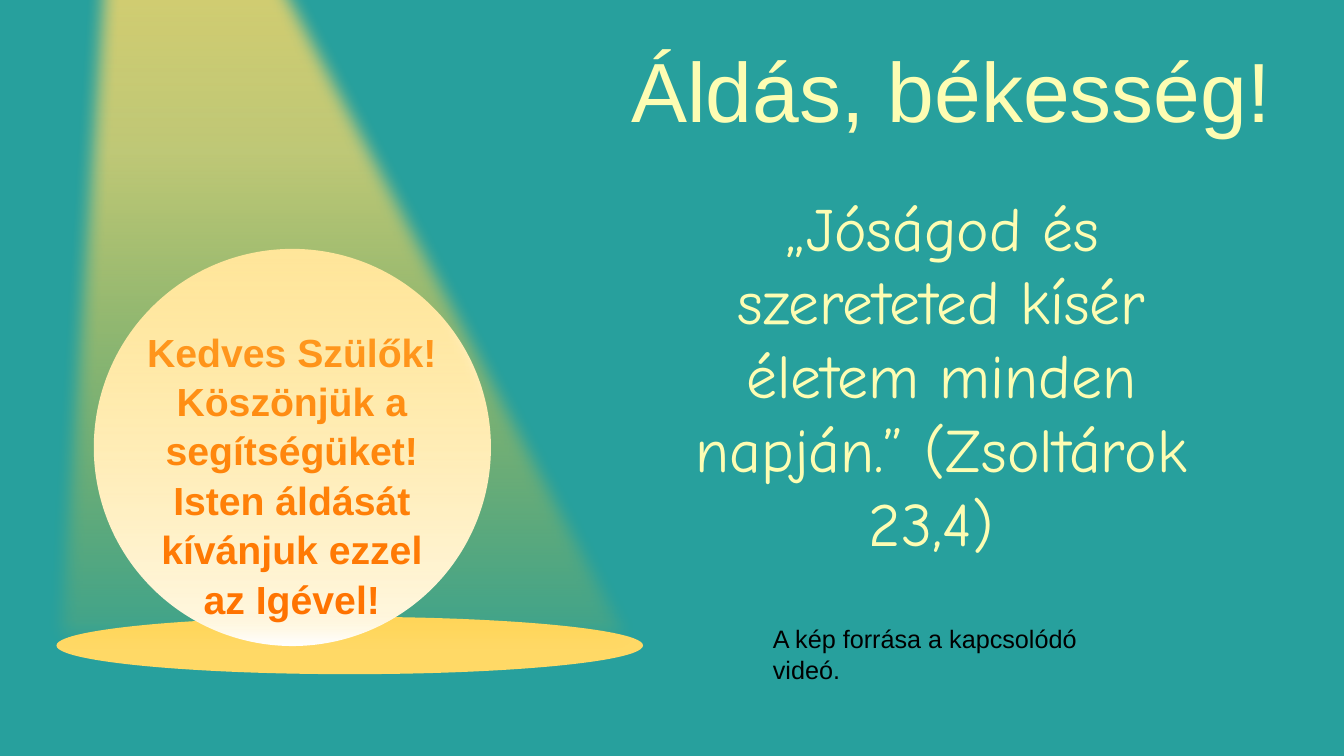
from pptx import Presentation
from pptx.dml.color import RGBColor as RGB
from pptx.enum.shapes import MSO_SHAPE as SHAPE
from pptx.enum.text import MSO_ANCHOR as ANCHOR, MSO_AUTO_SIZE as AUTO, PP_ALIGN as ALIGN
from pptx.oxml.ns import qn
from pptx.util import Pt
from lxml.etree import SubElement

COLOURS = {
    "teal": "27A09D",
    "cream": "FDFDB3",
    "orange": "FF6600",
    "gold": "FFD966",
    "amber": "FFC000",
    "white": "FFFFFF",
    "black": "000000",
}


class BlessingSlide:
    def __init__(self, prs):
        self.slide = prs.slides.add_slide(prs.slide_layouts[5])
        background = self.slide.background.fill
        background.solid()
        background.fore_color.rgb = self.colour("teal")

    @staticmethod
    def colour(name):
        return RGB.from_string(COLOURS[name])

    def shape(self, kind, box, fill=None):
        item = self.slide.shapes.add_shape(kind, *map(Pt, box))
        item.shadow.inherit = False
        item.line.fill.background()
        if fill:
            item.fill.solid()
            item.fill.fore_color.rgb = self.colour(fill)
        return item

    def beam(self, box, apex, stops, soft_radius):
        """Draw a soft-edged triangle; stops are (position %, colour, opacity %) from the bottom up."""
        light = self.shape(SHAPE.ISOSCELES_TRIANGLE, box)
        light.adjustments[0] = apex
        light.fill.gradient()
        light.fill.gradient_angle = 90
        properties = light._element.spPr
        stop_list = properties.find(".//" + qn("a:gsLst"))
        for old_stop in list(stop_list):
            stop_list.remove(old_stop)
        for position, name, opacity in stops:
            stop = SubElement(stop_list, qn("a:gs"), pos=str(position * 1000))
            tint = SubElement(stop, qn("a:srgbClr"), val=COLOURS[name])
            SubElement(tint, qn("a:alpha"), val=str(opacity * 1000))
        effects = properties.find(qn("a:effectLst"))
        SubElement(effects, qn("a:softEdge"), rad=str(Pt(soft_radius)))

    def text(self, box, lines, **style):
        holder = self.slide.shapes.add_textbox(*map(Pt, box))
        self.fill_text(holder, lines, **style)

    def title(self, box, wording, **style):
        holder = self.slide.shapes.title
        for side, length in zip(("left", "top", "width", "height"), box):
            setattr(holder, side, Pt(length))
        self.fill_text(holder, [wording], **style)

    def fill_text(self, holder, lines, size, colour, font="Arial", bold=False,
                  wrap=True, **paragraph_format):
        frame = holder.text_frame
        frame_format = {"word_wrap": wrap, "auto_size": AUTO.SHAPE_TO_FIT_TEXT,
                        "vertical_anchor": ANCHOR.TOP}
        for key, value in frame_format.items():
            setattr(frame, key, value)
        frame.text = "\n".join(lines)
        font_format = {"name": font, "size": Pt(size), "bold": bold}
        for paragraph in frame.paragraphs:
            for key, value in paragraph_format.items():
                setattr(paragraph, key, value)
            for run in paragraph.runs:
                for key, value in font_format.items():
                    setattr(run.font, key, value)
                run.font.color.rgb = self.colour(colour)


def main():
    prs = Presentation()
    prs.slide_width, prs.slide_height = Pt(960), Pt(540)
    page = BlessingSlide(prs)

    page.shape(SHAPE.OVAL, (40.3, 440.6, 419, 41), "gold")
    page.shape(SHAPE.OVAL, (67, 177.8, 283.7, 283.7), "white")
    page.text((97.2, 229, 222.5, 211),
              ["Kedves Szülők!", "Köszönjük a segítségüket!",
               "Isten áldását kívánjuk ezzel az Igével!"],
              size=28, colour="orange", bold=True, alignment=ALIGN.CENTER,
              line_spacing=1.05)
    page.text((471.6, 131.8, 401.8, 273.6),
              ["„Jóságod és szereteted kísér életem minden napján.” (Zsoltárok 23,4) "],
              size=44, colour="cream", font="Comic Neue", alignment=ALIGN.CENTER,
              space_before=Pt(10))
    page.title((441.4, 16.6, 492.5, 80), "Áldás, békesség! ",
               size=60, colour="cream", wrap=False, alignment=ALIGN.CENTER,
               line_spacing=1.1)
    page.beam((31, -272.9, 440, 739.4), 0.111,
              [(0, "amber", 9), (48, "gold", 70), (100, "gold", 100)], 12.5)
    page.text((545, 440.6, 275.8, 51), ["A kép forrása a kapcsolódó videó."],
              size=18, colour="black", alignment=ALIGN.LEFT, line_spacing=1.04)

    prs.save("out.pptx")


if __name__ == "__main__":
    main()
